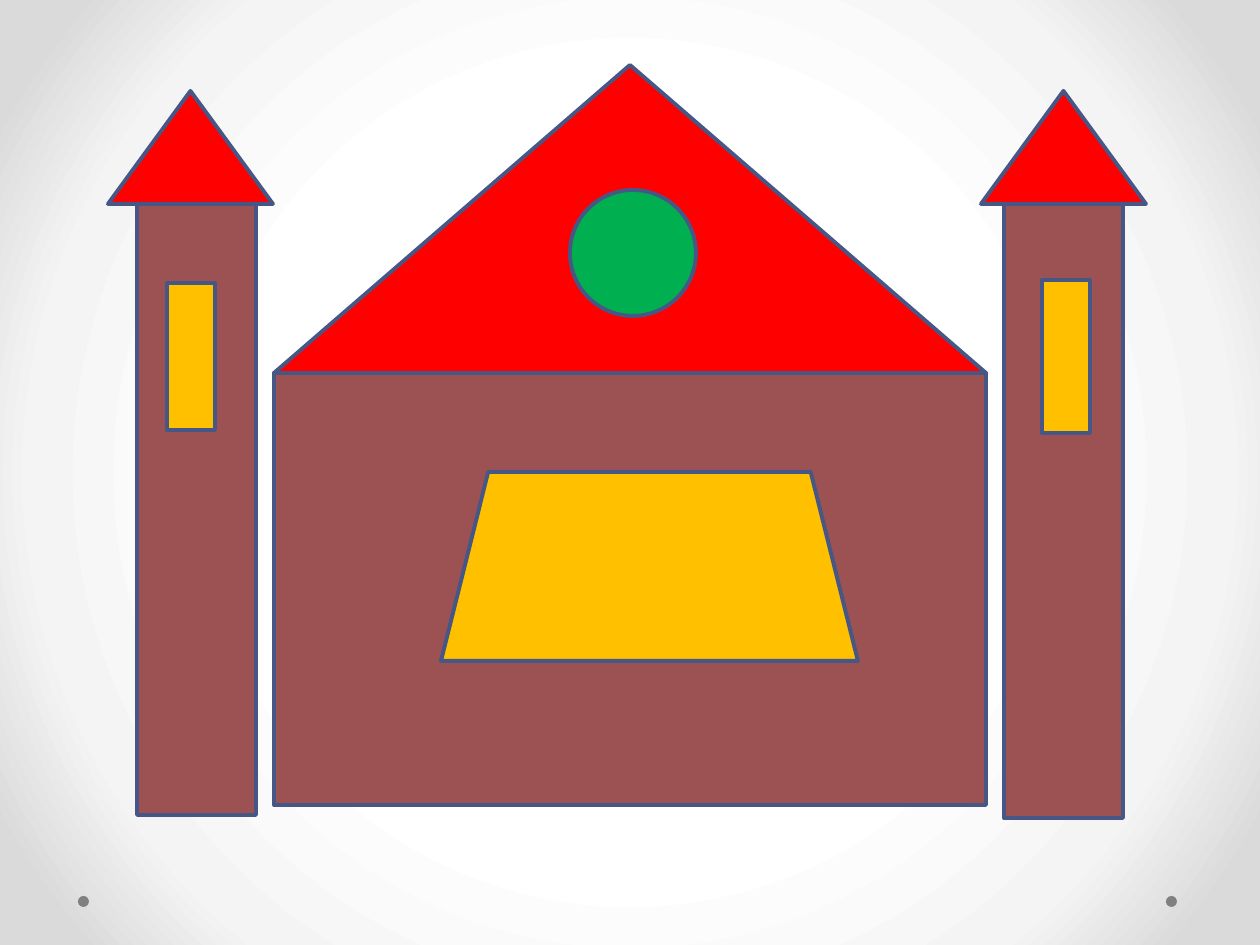
from dataclasses import dataclass

from lxml import etree
from pptx import Presentation
from pptx.dml.color import RGBColor
from pptx.enum import shapes
from pptx.oxml import ns
from pptx.util import Emu, Pt

SCALE = 914400 / 126
KIND = shapes.MSO_SHAPE


@dataclass(frozen=True)
class Theme:
    wall: str = "9C5252"
    roof: str = "FF0000"
    window: str = "FFC000"
    rose: str = "00B050"
    outline: str = "475785"
    dot: str = "808080"
    outline_pt: float = 2.25
    glow: tuple = ((50, "FFFFFF"), (76, "F4F4F4"), (92, "DADADA"))


THEME = Theme()


def px(n):
    return Emu(round(n * SCALE))


def add_part(s, kind, box, color, outlined=True, adj=None):
    sp = s.shapes.add_shape(kind, *map(px, box))
    sp.shadow.inherit = False
    sp.fill.solid()
    sp.fill.fore_color.rgb = RGBColor.from_string(color)
    if outlined:
        sp.line.color.rgb = RGBColor.from_string(THEME.outline)
        sp.line.width = Pt(THEME.outline_pt)
        etree.SubElement(sp.line._ln, ns.qn("a:round"))
    else:
        sp.line.fill.background()
    if adj is not None:
        sp.adjustments[0] = adj
    return sp


def add_background(s):
    s.background.fill.gradient()
    grad = next(s._element.iter(ns.qn("a:gradFill")))
    for child in list(grad):
        grad.remove(child)
    stops = etree.SubElement(grad, ns.qn("a:gsLst"))
    for position, color in THEME.glow:
        stop = etree.SubElement(stops, ns.qn("a:gs"), pos=str(position * 1000))
        etree.SubElement(stop, ns.qn("a:srgbClr"), val=color)
    radial = etree.SubElement(grad, ns.qn("a:path"), path="circle")
    etree.SubElement(radial, ns.qn("a:fillToRect"),
                     dict.fromkeys("ltrb", "50000"))


def add_dots(s, x, y, w, h):
    for left in (x, x + w - h):
        add_part(s, KIND.OVAL, (left, y, h, h), THEME.dot, outlined=False)


def add_hall(s, x, y, w, h):
    roof_h = 308
    add_part(s, KIND.RECTANGLE, (x, y + roof_h, w, h - roof_h), THEME.wall)
    add_part(s, KIND.ISOSCELES_TRIANGLE, (x, y, w, roof_h), THEME.roof, adj=0.5)
    add_part(s, KIND.OVAL, (x + 296, y + 125, 126, 126), THEME.rose)
    add_part(s, KIND.TRAPEZOID, (x + 167, y + 407, 417, 189), THEME.window,
             adj=0.25)


def add_tower(s, x, y, w, h, wall_x, window_box):
    roof_h = 113
    left, top, width, height = window_box
    add_part(s, KIND.RECTANGLE, (x + wall_x, y + roof_h, 119, h - roof_h),
             THEME.wall)
    add_part(s, KIND.RECTANGLE, (x + left, y + top, width, height),
             THEME.window)
    add_part(s, KIND.ISOSCELES_TRIANGLE, (x, y, w, roof_h), THEME.roof, adj=0.5)


def main():
    prs = Presentation()
    prs.slide_width, prs.slide_height = px(1260), px(945)
    s = prs.slides.add_slide(prs.slide_layouts[6])
    add_background(s)
    add_dots(s, 78, 896, 1099, 11)
    add_hall(s, 274, 65, 712, 740)
    add_tower(s, 108, 91, 165, 724, 29, (59, 192, 48, 147))
    add_tower(s, 981, 91, 165, 727, 23, (61, 189, 48, 153))
    prs.save("out.pptx")


if __name__ == "__main__":
    main()
